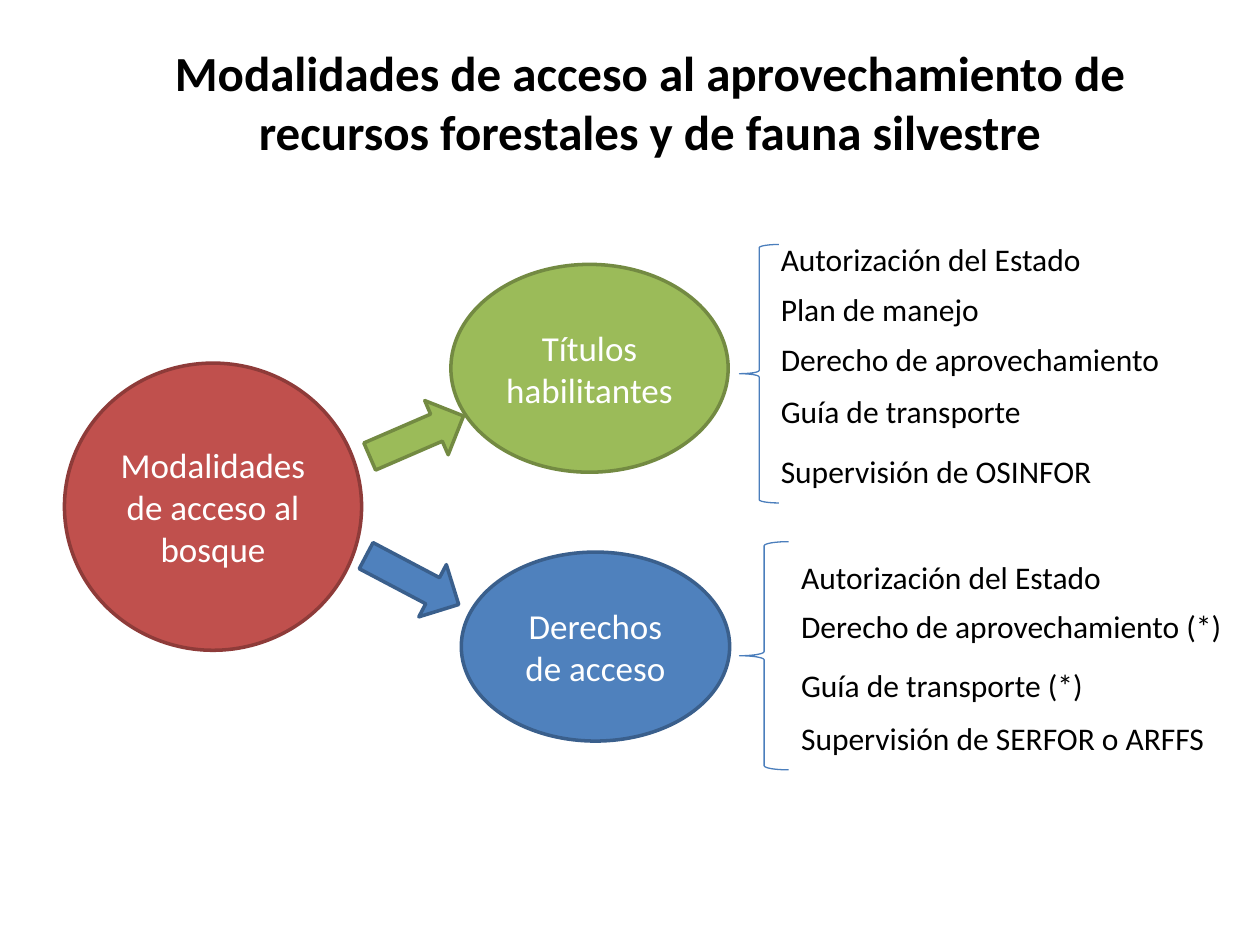
from pptx import Presentation
from pptx import util as u
from pptx.dml.color import RGBColor
from pptx.enum import shapes, text

COLOURS = {
    "red": "C0504D", "red_edge": "8E3B39",
    "green": "9BBB59", "green_edge": "738A42",
    "blue": "4F81BD", "blue_edge": "3A5F8C",
    "brace": "4B7EBC", "black": "000000", "white": "FFFFFF",
}
KIND = shapes.MSO_SHAPE
ALIGN = text.PP_ALIGN

TITLE = "Modalidades de acceso al aprovechamiento de recursos forestales y de fauna silvestre"
OVALS = [
    ("Modalidades de acceso al bosque", "red", (1.3, 7.32, 5.99, 5.79)),
    ("Títulos habilitantes", "green", (9.09, 5.33, 5.59, 4.19)),
    ("Derechos de acceso", "blue", (9.3, 11.13, 5.41, 3.81)),
]
ARROWS = [
    ("green", (7.37, 8.2, 2.06, 1.19), 336.6),
    ("blue", (7.26, 11.1, 2.11, 1.19), 27.8),
]
BRACES = [(14.91, 10.92, 0.99, 4.6), (14.91, 4.93, 0.79, 5.21)]
TITLE_REQUIREMENTS = [
    ("Autorización del Estado", 4.72),
    ("Plan de manejo", 5.72),
    ("Derecho de aprovechamiento", 6.73),
    ("Guía de transporte", 7.77),
    ("Supervisión de OSINFOR", 8.99),
]
ACCESS_REQUIREMENTS = [
    ("Autorización del Estado", 11.13),
    ("Derecho de aprovechamiento (*)", 12.12),
    ("Guía de transporte (*)", 13.31),
    ("Supervisión de SERFOR o ARFFS", 14.38),
]


def colour(name):
    """Return the named colour."""
    return RGBColor.from_string(COLOURS[name])


def lengths(values):
    """Turn centimetre values into lengths."""
    return [u.Cm(value) for value in values]


def write(shape, words, size, ink, align, bold=False):
    """Write one wrapped paragraph into a shape."""
    shape.text_frame.word_wrap = True
    para = shape.text_frame.paragraphs[0]
    para.text = words
    para.alignment = align
    para.font.name = "Calibri"
    para.font.size = u.Pt(size)
    para.font.bold = bold
    para.font.color.rgb = colour(ink)


def add_outlined(page, kind, frame, edge, width, fill=None):
    """Add a preset shape with an outline and an optional fill."""
    shape = page.shapes.add_shape(kind, *lengths(frame))
    shape.shadow.inherit = False
    shape.line.color.rgb = colour(edge)
    shape.line.width = u.Pt(width)
    if fill:
        shape.fill.solid()
        shape.fill.fore_color.rgb = colour(fill)
    else:
        shape.fill.background()
    return shape


def add_oval(page, words, hue, frame):
    """Add a labelled ellipse."""
    oval = add_outlined(page, KIND.OVAL, frame, f"{hue}_edge", 2, hue)
    oval.text_frame.vertical_anchor = text.MSO_ANCHOR.MIDDLE
    write(oval, words, 20, "white", ALIGN.CENTER)


def add_arrow(page, hue, frame, angle):
    """Add a rotated block arrow."""
    arrow = add_outlined(page, KIND.RIGHT_ARROW, frame, f"{hue}_edge", 2, hue)
    arrow.rotation = angle


def add_text(page, words, frame, size, align=ALIGN.LEFT, bold=False):
    """Add a black text box."""
    box = page.shapes.add_textbox(*lengths(frame))
    write(box, words, size, "black", align, bold)


def add_requirements(page, items, left, width):
    """Add a column of requirements."""
    for words, top in items:
        add_text(page, words, (left, top, width, 1.03), 18)


def main():
    """Build and save the slide."""
    deck = Presentation()
    deck.slide_width, deck.slide_height = lengths((25.4, 19.05))
    page = deck.slides.add_slide(deck.slide_layouts[6])
    add_text(page, TITLE, (3.1, 0.74, 20, 2.64), 28, ALIGN.CENTER, True)
    for oval in OVALS:
        add_oval(page, *oval)
    for frame in BRACES:
        add_outlined(page, KIND.LEFT_BRACE, frame, "brace", 0.75)
    add_requirements(page, TITLE_REQUIREMENTS, 15.49, 8.79)
    add_requirements(page, ACCESS_REQUIREMENTS, 15.9, 9.5)
    for arrow in ARROWS:
        add_arrow(page, *arrow)
    deck.save("out.pptx")


if __name__ == "__main__":
    main()
